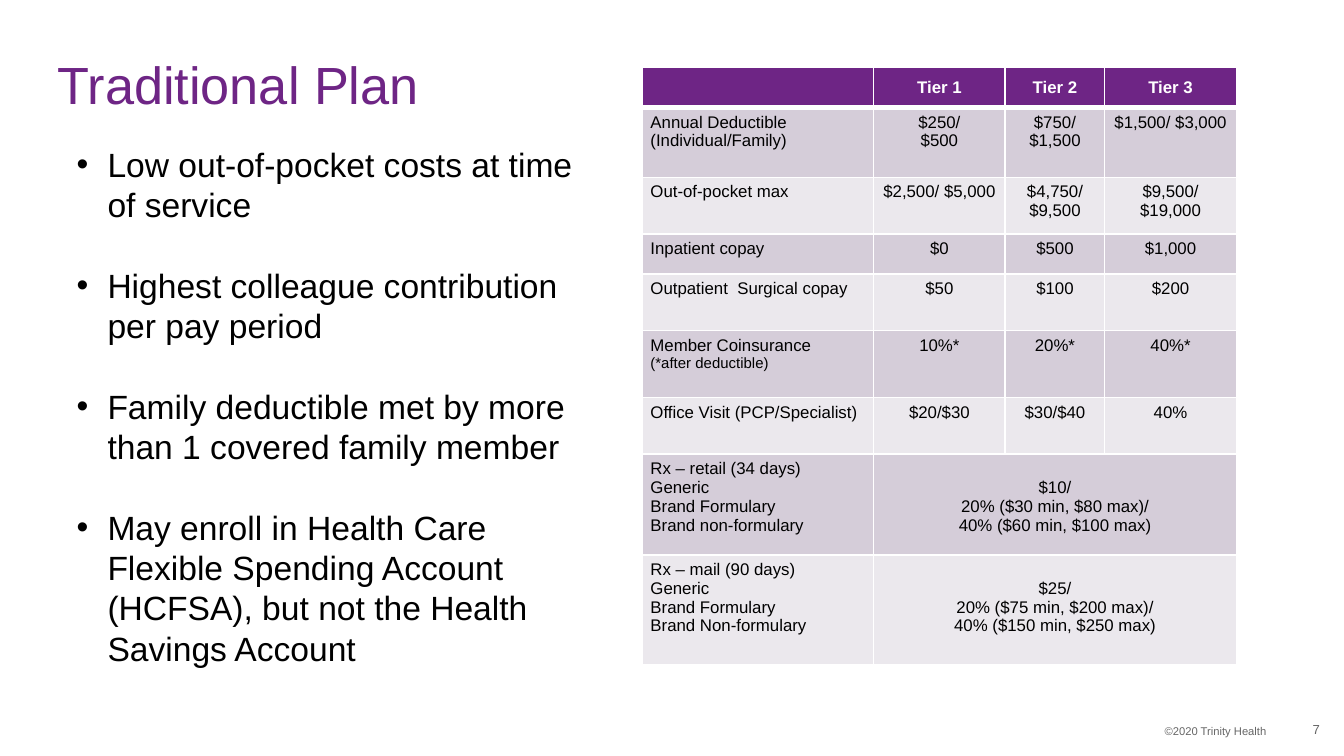
from lxml import etree
from pptx import Presentation
from pptx import util as u
from pptx.dml.color import RGBColor
from pptx.enum import text
from pptx.oxml.ns import qn

PURPLE, WHITE, BLACK, GRAY = "6E2585", "FFFFFF", "000000", "666666"
BANDS = ["D5CDD9", "EBE8ED"]
ALIGN = text.PP_ALIGN
ANCHOR = text.MSO_ANCHOR


def write(frame, content, size, color, bold=False, align=ALIGN.LEFT, anchor=ANCHOR.TOP,
          spacing=None, gap=0, bullet=None):
    """Fill a text frame with one paragraph per line of content."""
    frame.word_wrap = True
    frame.vertical_anchor = anchor
    for index, line in enumerate(content.split("\n")):
        para = frame.paragraphs[0] if index == 0 else frame.add_paragraph()
        para.alignment = align
        para.line_spacing = spacing
        para.space_before = u.Pt(gap if index else 0)
        if bullet:
            props = para._p.get_or_add_pPr()
            props.set("marL", str(u.Inches(0.23)))
            props.set("indent", str(u.Inches(-0.23)))
            etree.SubElement(props, qn("a:buChar"), char=bullet)
        if not line:
            etree.SubElement(para._p, qn("a:endParaRPr"), sz=str(size * 100))
            continue
        span = para.add_run()
        span.text = line
        span.font.name = "Arial"
        span.font.size = u.Pt(8 if line.startswith("(*") else size)
        span.font.bold = bold
        span.font.color.rgb = RGBColor.from_string(color)


def add_borders(cell, widths):
    """Put white lines on the cell's sides; widths in points, by side letter."""
    props = cell._tc.get_or_add_tcPr()
    for index, (side, width) in enumerate(widths.items()):
        line = etree.Element(qn(f"a:ln{side}"), w=str(u.Pt(width)))
        fill = etree.SubElement(line, qn("a:solidFill"))
        etree.SubElement(fill, qn("a:srgbClr"), val=WHITE)
        props.insert(index, line)


deck = Presentation()
deck.slide_width = u.Inches(10)
deck.slide_height = u.Inches(10) * 9 // 16
page = deck.slides.add_slide(deck.slide_layouts[1])

# Title
title = page.shapes.title
title.left, title.top, title.width, title.height = map(u.Inches, (0.43, 0.38, 9, 0.55))
frame = title.text_frame
frame.margin_left = frame.margin_top = frame.margin_right = frame.margin_bottom = 0
frame.auto_size = text.MSO_AUTO_SIZE.NONE
write(frame, "Traditional Plan", 28, PURPLE, anchor=ANCHOR.MIDDLE, spacing=0.9)

# Plan highlights
highlights = page.placeholders[1]
highlights.left, highlights.top, highlights.width, highlights.height = map(
    u.Inches, (0.47, 1.02, 4.07, 4.04))
highlights.text_frame.auto_size = text.MSO_AUTO_SIZE.NONE
write(highlights.text_frame, "\n".join([
    "Low out-of-pocket costs at time of service",
    "Highest colleague contribution per pay period",
    "Family deductible met by more than 1 covered family member",
    "May enroll in Health Care Flexible Spending Account (HCFSA), "
    "but not the Health Savings Account",
]), 18, BLACK, spacing=1.0, gap=21.6, bullet="•")

# Benefits by tier; a row with two entries has one value for all tiers
benefits = [
    ["", "Tier 1", "Tier 2", "Tier 3"],
    ["Annual Deductible (Individual/Family)", "$250/\n$500", "$750/\n$1,500", "$1,500/ $3,000"],
    ["Out-of-pocket max", "$2,500/ $5,000", "$4,750/ $9,500", "$9,500/ $19,000"],
    ["Inpatient copay", "$0", "$500", "$1,000"],
    ["Outpatient  Surgical copay", "$50", "$100", "$200"],
    ["Member Coinsurance\n(*after deductible)", "10%*", "20%*", "40%*"],
    ["Office Visit (PCP/Specialist)", "$20/$30", "$30/$40", "40%"],
    ["Rx – retail (34 days)\nGeneric\nBrand Formulary\nBrand non-formulary",
     "$10/\n20% ($30 min, $80 max)/\n40% ($60 min, $100 max)"],
    ["Rx – mail (90 days)\nGeneric\nBrand Formulary\nBrand Non-formulary",
     "$25/\n20% ($75 min, $200 max)/\n40% ($150 min, $250 max)"],
]
widths = [1.72, 0.98, 0.74, 0.98]
heights = [0.3, 0.52, 0.42, 0.3, 0.42, 0.5, 0.42, 0.75, 0.82]
table = page.shapes.add_table(len(heights), len(widths), u.Inches(4.78), u.Inches(0.5),
                              u.Inches(sum(widths)), u.Inches(sum(heights))).table
for column, width in zip(table.columns, widths):
    column.width = u.Inches(width)
for row, height in zip(table.rows, heights):
    row.height = u.Inches(height)

for r, entries in enumerate(benefits):
    header = r == 0
    shared = len(entries) == 2
    if shared:
        table.cell(r, 1).merge(table.cell(r, 3))
    for c in range(len(widths)):
        cell = table.cell(r, c)
        cell.fill.solid()
        cell.fill.fore_color.rgb = RGBColor.from_string(PURPLE if header else BANDS[(r - 1) % 2])
        add_borders(cell, {"L": 1, "R": 1, "T": 3 if r == 1 else 1, "B": 3 if header else 1})
        if c >= len(entries):
            continue
        cell.margin_left = cell.margin_right = u.Inches(0.06)
        # A shared value starts level with the second line of its label
        cell.margin_top = u.Inches(0.18 if shared and c else 0.04)
        cell.margin_bottom = u.Inches(0.04)
        write(cell.text_frame, entries[c], 9, WHITE if header else BLACK, bold=header,
              align=ALIGN.CENTER if c else ALIGN.LEFT)
        cell.vertical_anchor = ANCHOR.MIDDLE if header else ANCHOR.TOP

# Footer
number = page.shapes.add_textbox(*map(u.Inches, (9.38, 5.28, 0.44, 0.3)))
number.text_frame.margin_right = 0
write(number.text_frame, "7", 7, GRAY, align=ALIGN.RIGHT, anchor=ANCHOR.MIDDLE)
rights = page.shapes.add_textbox(*map(u.Inches, (5.33, 5.34, 4.19, 0.2)))
write(rights.text_frame, "©2020 Trinity Health", 6, GRAY, align=ALIGN.RIGHT)

deck.save("out.pptx")
